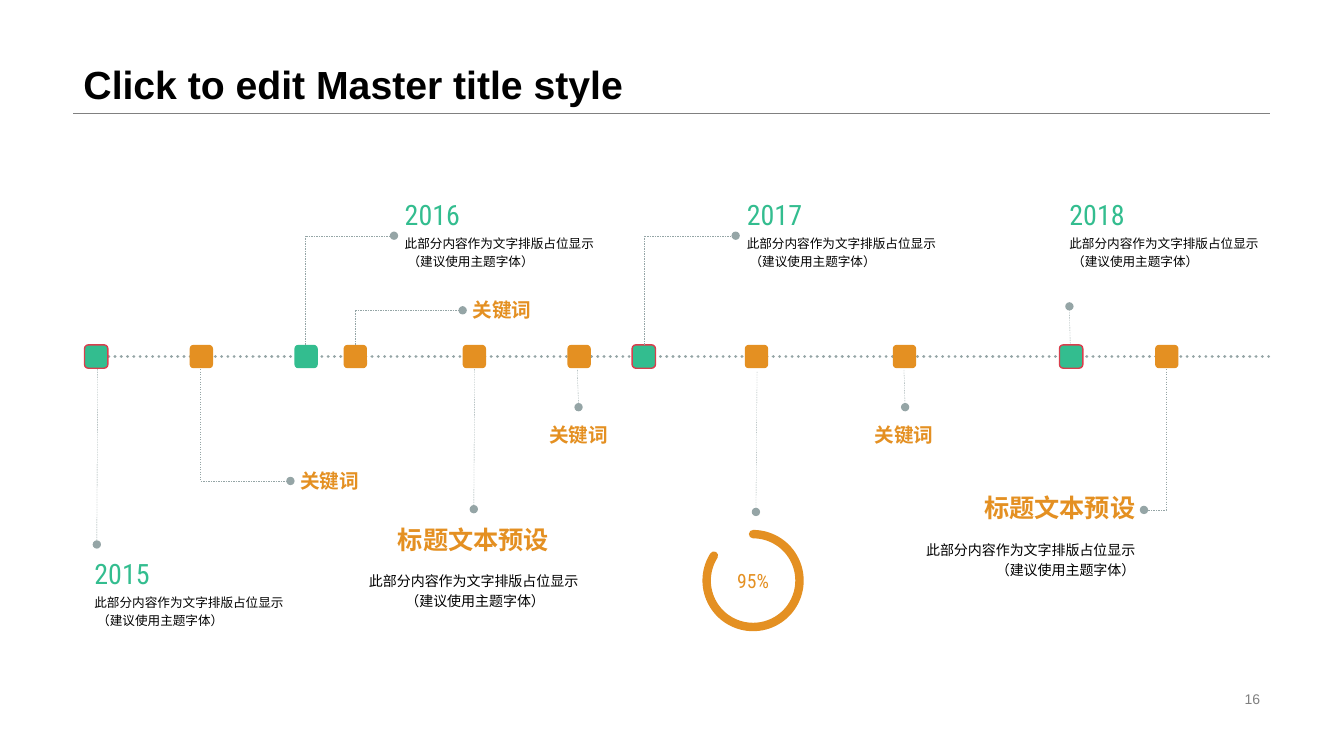
"""Builds a timeline slide of years, keywords and section notes with python-pptx."""
from dataclasses import dataclass

import pptx
import pptx.dml.color
import pptx.enum.dml
import pptx.enum.shapes
import pptx.enum.text
import pptx.oxml.ns
import pptx.util
from lxml import etree

Cm = pptx.util.Cm
ALIGN = pptx.enum.text.PP_ALIGN
ANCHOR = pptx.enum.text.MSO_ANCHOR
SHAPE = pptx.enum.shapes.MSO_SHAPE
DASH = pptx.enum.dml.MSO_LINE


@dataclass(frozen=True)
class Theme:
    black: str = "000000"
    gray: str = "808080"
    slate: str = "95A5A6"
    green: str = "33BD8F"
    orange: str = "E49022"
    red: str = "D93E4D"
    body_font: str = "Arial"
    number_font: str = "Roboto Condensed"
    title_size: int = 28
    year_size: int = 20
    heading_size: int = 18
    keyword_size: int = 14
    note_size: int = 10
    small_size: int = 9


class TimelineSlide:
    def __init__(self, slide, theme):
        self.slide = slide
        self.theme = theme

    def fill_text(self, frame, text, size, color, align=ALIGN.LEFT, bold=False,
                  font=None, spacing=None, anchor=ANCHOR.TOP, wrap=True):
        frame.word_wrap = wrap
        frame.auto_size = pptx.enum.text.MSO_AUTO_SIZE.NONE
        frame.vertical_anchor = anchor
        paragraph = frame.paragraphs[0]
        paragraph.text = text
        paragraph.alignment = align
        if spacing:
            paragraph.line_spacing = spacing
        paragraph.font.name = font or self.theme.body_font
        paragraph.font.size = pptx.util.Pt(size)
        paragraph.font.bold = bold
        paragraph.font.color.rgb = pptx.dml.color.RGBColor.from_string(color)

    def stroke(self, line, color, width, dash=None, round_cap=False, dot_end=False):
        line.color.rgb = pptx.dml.color.RGBColor.from_string(color)
        line.width = pptx.util.Pt(width)
        if dash:
            line.dash_style = dash
        element = line._get_or_add_ln()
        if round_cap:
            element.set("cap", "rnd")
        if dot_end:
            etree.SubElement(element, pptx.oxml.ns.qn("a:tailEnd"), type="oval")

    def title(self, text):
        shape = self.slide.shapes.title
        shape.left, shape.top, shape.width, shape.height = Cm(1.85), Cm(0), Cm(30.15), Cm(2.84)
        self.fill_text(shape.text_frame, text, self.theme.title_size, self.theme.black,
                       bold=True, spacing=0.9, anchor=ANCHOR.BOTTOM)

    def text(self, left, top, width, height, text, size, color, **style):
        box = self.slide.shapes.add_textbox(Cm(left), Cm(top), Cm(width), Cm(height))
        self.fill_text(box.text_frame, text, size, color, **style)

    def line(self, start, end, color, width, **style):
        connector = self.slide.shapes.add_connector(
            pptx.enum.shapes.MSO_CONNECTOR.STRAIGHT, *map(Cm, start + end))
        self.stroke(connector.line, color, width, **style)
        etree.SubElement(connector._element.spPr, pptx.oxml.ns.qn("a:effectLst"))

    def leader(self, start, end):
        self.line(start, end, self.theme.slate, 0.25, dash=DASH.DASH, dot_end=True)

    def elbow(self, start, end):
        corner = (start[0], end[1])
        builder = self.slide.shapes.build_freeform(*map(Cm, start))
        builder.add_line_segments([tuple(map(Cm, point)) for point in (corner, end)], close=False)
        shape = builder.convert_to_shape()
        shape.shadow.inherit = False
        shape.fill.background()
        self.stroke(shape.line, self.theme.slate, 0.25, dash=DASH.DASH, dot_end=True)

    def marker(self, left, color, outlined):
        shape = self.slide.shapes.add_shape(
            SHAPE.ROUNDED_RECTANGLE, Cm(left), Cm(8.69), Cm(0.59), Cm(0.59))
        shape.shadow.inherit = False
        shape.fill.solid()
        shape.fill.fore_color.rgb = pptx.dml.color.RGBColor.from_string(color)
        if outlined:
            self.stroke(shape.line, self.theme.red, 1)
        else:
            shape.line.fill.background()

    def gauge(self, left, top, diameter, text):
        shape = self.slide.shapes.add_shape(
            SHAPE.ARC, Cm(left), Cm(top), Cm(diameter), Cm(diameter))
        shape.shadow.inherit = False
        shape.adjustments[0] = 162
        shape.adjustments[1] = 127.51
        shape.fill.background()
        self.stroke(shape.line, self.theme.orange, 6, round_cap=True)
        self.fill_text(shape.text_frame, text, self.theme.keyword_size, self.theme.orange,
                       align=ALIGN.CENTER, font=self.theme.number_font,
                       anchor=ANCHOR.MIDDLE, wrap=False)

    def note(self, left, top, size, align=ALIGN.LEFT):
        self.text(left, top, 5.87, 1.55, "此部分内容作为文字排版占位显示\n （建议使用主题字体）",
                  size, self.theme.black, align=align, spacing=1.2)

    def year(self, left, top, text):
        self.text(left, top, 5.84, 1.09, text, self.theme.year_size, self.theme.green,
                  font=self.theme.number_font)
        self.note(left, top + 0.89, self.theme.small_size)

    def keyword(self, left, top, align):
        self.text(left, top, 3.3, 0.86, "关键词", self.theme.keyword_size,
                  self.theme.orange, align=align, bold=True)

    def section(self, left, top, align):
        self.text(left, top, 5.87, 1.14, "标题文本预设", self.theme.heading_size,
                  self.theme.orange, align=align, bold=True)
        self.note(left, top + 1.14, self.theme.note_size, align)


def main():
    presentation = pptx.Presentation()
    presentation.slide_width, presentation.slide_height = Cm(33.87), Cm(19.05)
    theme = Theme()
    timeline = TimelineSlide(
        presentation.slides.add_slide(presentation.slide_layouts[5]), theme)

    timeline.line((1.85, 2.84), (32, 2.84), theme.gray, 0.25)
    timeline.title("Click to edit Master title style")
    timeline.text(23.93, 17.32, 8.08, 0.58, "16", theme.note_size, theme.gray,
                  align=ALIGN.RIGHT, anchor=ANCHOR.MIDDLE)

    timeline.line((2.74, 8.99), (32, 8.99), theme.slate, 2.25,
                  dash=DASH.ROUND_DOT, round_cap=True)
    for left, outlined in ((2.13, True), (7.42, False), (15.93, True), (26.7, True)):
        timeline.marker(left, theme.green, outlined)
    for left in (4.78, 8.66, 11.66, 14.3, 18.77, 22.5, 29.11):
        timeline.marker(left, theme.orange, False)

    for start, end in (((2.46, 9.3), (2.44, 13.72)), ((11.96, 9.3), (11.94, 12.83)),
                       ((14.55, 9.32), (14.58, 10.26)), ((19.08, 9.37), (19.05, 12.9)),
                       ((22.78, 9.32), (22.81, 10.26)), ((26.97, 8.66), (26.95, 7.72))):
        timeline.leader(start, end)
    for start, end in (((7.7, 8.69), (9.93, 5.94)), ((16.23, 8.69), (18.54, 5.94)),
                       ((5.05, 9.3), (7.32, 12.12)), ((8.94, 8.69), (11.66, 7.82)),
                       ((29.39, 9.3), (28.83, 12.85))):
        timeline.elbow(start, end)

    timeline.gauge(17.81, 13.46, 2.34, "95%")
    for left, top, year in ((2.13, 13.89, "2015"), (9.95, 4.85, "2016"),
                            (18.57, 4.85, "2017"), (26.7, 4.85, "2018")):
        timeline.year(left, top, year)
    for left, top, align in ((7.32, 11.68, ALIGN.LEFT), (12.93, 10.52, ALIGN.CENTER),
                             (11.66, 7.39, ALIGN.LEFT), (21.13, 10.52, ALIGN.CENTER)):
        timeline.keyword(left, top, align)
    timeline.section(9, 13.08, ALIGN.CENTER)
    timeline.section(22.99, 12.29, ALIGN.RIGHT)

    presentation.save("out.pptx")


if __name__ == "__main__":
    main()
